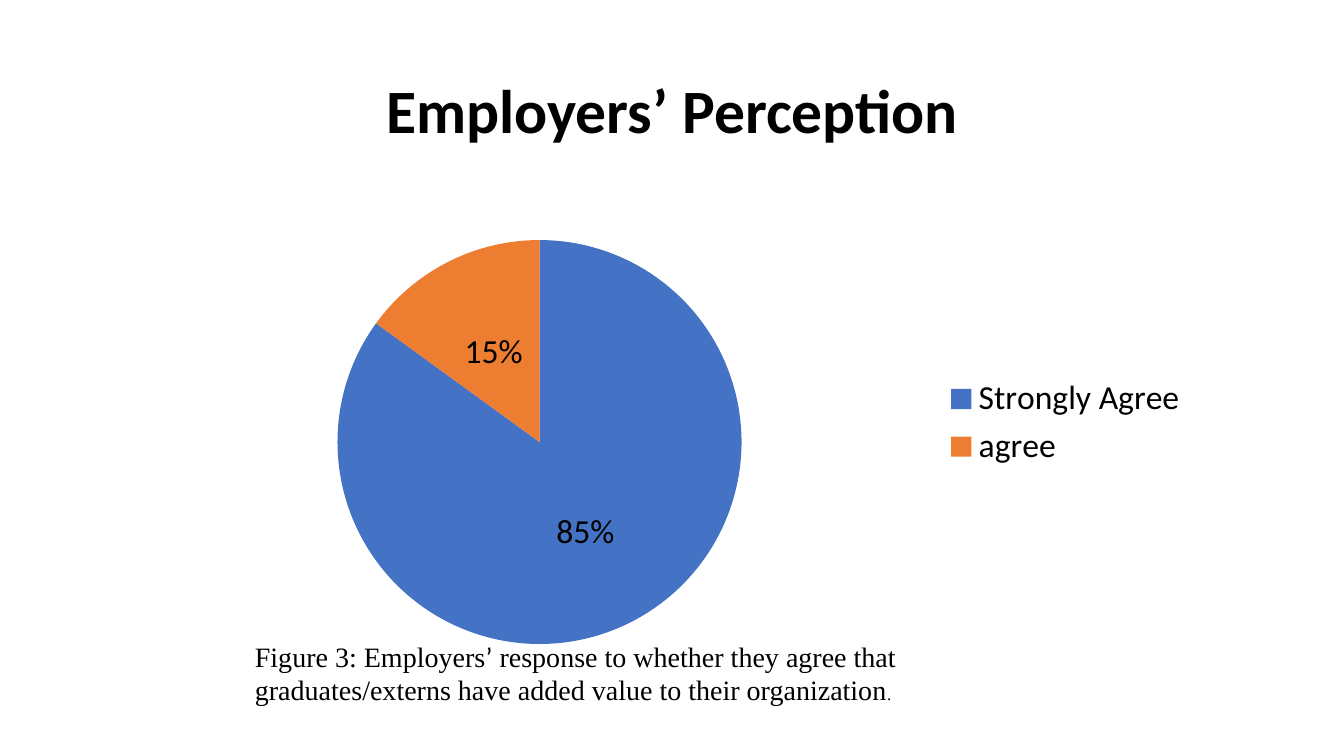
"""Builds the slide on employers' perception with its pie chart and caption."""
from dataclasses import dataclass

from lxml import etree
from pptx import Presentation
from pptx import util as u
from pptx.chart.data import CategoryChartData
from pptx.dml.color import RGBColor
from pptx.enum import chart as ch
from pptx.enum import text as t
from pptx.oxml.ns import qn

EMU_PER_PX = 9144
COLOURS = {"ink": "000000", "paper": "FFFFFF", "blue": "4472C4", "orange": "ED7D31"}
SANS, SERIF = "Calibri", "Times New Roman"


@dataclass(frozen=True)
class Box:
    left: int
    top: int
    width: int
    height: int

    def emu(self) -> list[u.Emu]:
        return [u.Emu(n * EMU_PER_PX) for n in (self.left, self.top, self.width, self.height)]


@dataclass(frozen=True)
class Answer:
    label: str
    share: float
    colour: str


@dataclass(frozen=True)
class Piece:
    words: str
    font: str
    size: int = 20


SLIDE = Box(0, 0, 1333, 750)
TITLE = Box(92, 40, 1150, 145)
CHART = Box(92, 200, 1097, 439)
CAPTION = Box(243, 629, 814, 77)
PLOT = {"x": 0.138, "y": 0.087, "w": 0.532, "h": 0.913}
ANSWERS = [Answer("Strongly Agree", 0.85, "blue"), Answer("agree", 0.15, "orange")]
CAPTION_PIECES = [
    Piece("Figure 3: Employers", SERIF),
    Piece("’", SANS),
    Piece(" response to whether they agree that graduates/externs"
          " have added value to their organization", SERIF),
    Piece(".", SERIF, 12),
]


def rgb(name: str) -> RGBColor:
    return RGBColor.from_string(COLOURS[name])


def style_font(font, name: str, size: int, bold: bool = False) -> None:
    font.name, font.size, font.bold = name, u.Pt(size), bold
    font.color.rgb = rgb("ink")


def add_text(paragraph, words: str, *, font: str = SANS, size: int = 20,
             bold: bool = False) -> None:
    run = paragraph.add_run()
    run.text = words
    style_font(run.font, font, size, bold)


def place_title(slide) -> None:
    title = slide.shapes.title
    title.left, title.top, title.width, title.height = TITLE.emu()
    title.text_frame.vertical_anchor = t.MSO_ANCHOR.MIDDLE
    heading = title.text_frame.paragraphs[0]
    heading.alignment, heading.line_spacing = t.PP_ALIGN.CENTER, 0.9
    add_text(heading, "Employers’ Perception", size=44, bold=True)


def fix_plot_area(pie) -> None:
    plot_area = pie.plots[0]._element.getparent()
    for old in plot_area.findall(qn("c:layout")):
        plot_area.remove(old)
    layout = etree.Element(qn("c:layout"))
    plot_area.insert(0, layout)
    manual = etree.SubElement(layout, qn("c:manualLayout"))
    settings = {"layoutTarget": "inner", "xMode": "edge", "yMode": "edge", **PLOT}
    for tag, value in settings.items():
        etree.SubElement(manual, qn(f"c:{tag}")).set("val", str(value))


def add_pie(slide) -> None:
    data = CategoryChartData(number_format="0%")
    data.categories = [answer.label for answer in ANSWERS]
    data.add_series("Series 1", [answer.share for answer in ANSWERS])
    pie = slide.shapes.add_chart(ch.XL_CHART_TYPE.PIE, *CHART.emu(), data).chart
    style_font(pie.font, SANS, 10)
    pie.has_title = False
    pie.has_legend = True
    pie.legend.position = ch.XL_LEGEND_POSITION.RIGHT
    pie.legend.include_in_layout = False
    style_font(pie.legend.font, SANS, 24)

    plot = pie.plots[0]
    plot.vary_by_categories = True
    plot.has_data_labels = True
    labels = plot.data_labels
    labels.show_value, labels.show_percentage = True, False
    labels.number_format, labels.number_format_is_linked = "0%", False
    labels.position = ch.XL_LABEL_POSITION.CENTER
    style_font(labels.font, SANS, 24)
    for index, answer in enumerate(ANSWERS):
        wedge = plot.series[0].points[index].format
        wedge.fill.solid()
        wedge.fill.fore_color.rgb = rgb(answer.colour)
        wedge.line.fill.background()
    fix_plot_area(pie)


def add_caption(slide) -> None:
    frame = slide.shapes.add_textbox(*CAPTION.emu()).text_frame
    frame.word_wrap = True
    frame.auto_size = t.MSO_AUTO_SIZE.SHAPE_TO_FIT_TEXT
    frame.vertical_anchor = t.MSO_ANCHOR.MIDDLE
    for piece in CAPTION_PIECES:
        add_text(frame.paragraphs[0], piece.words, font=piece.font, size=piece.size)


def main() -> None:
    deck = Presentation()
    _, _, deck.slide_width, deck.slide_height = SLIDE.emu()
    slide = deck.slides.add_slide(deck.slide_layouts[5])
    slide.background.fill.solid()
    slide.background.fill.fore_color.rgb = rgb("paper")
    place_title(slide)
    add_pie(slide)
    add_caption(slide)
    deck.save("out.pptx")


if __name__ == "__main__":
    main()
